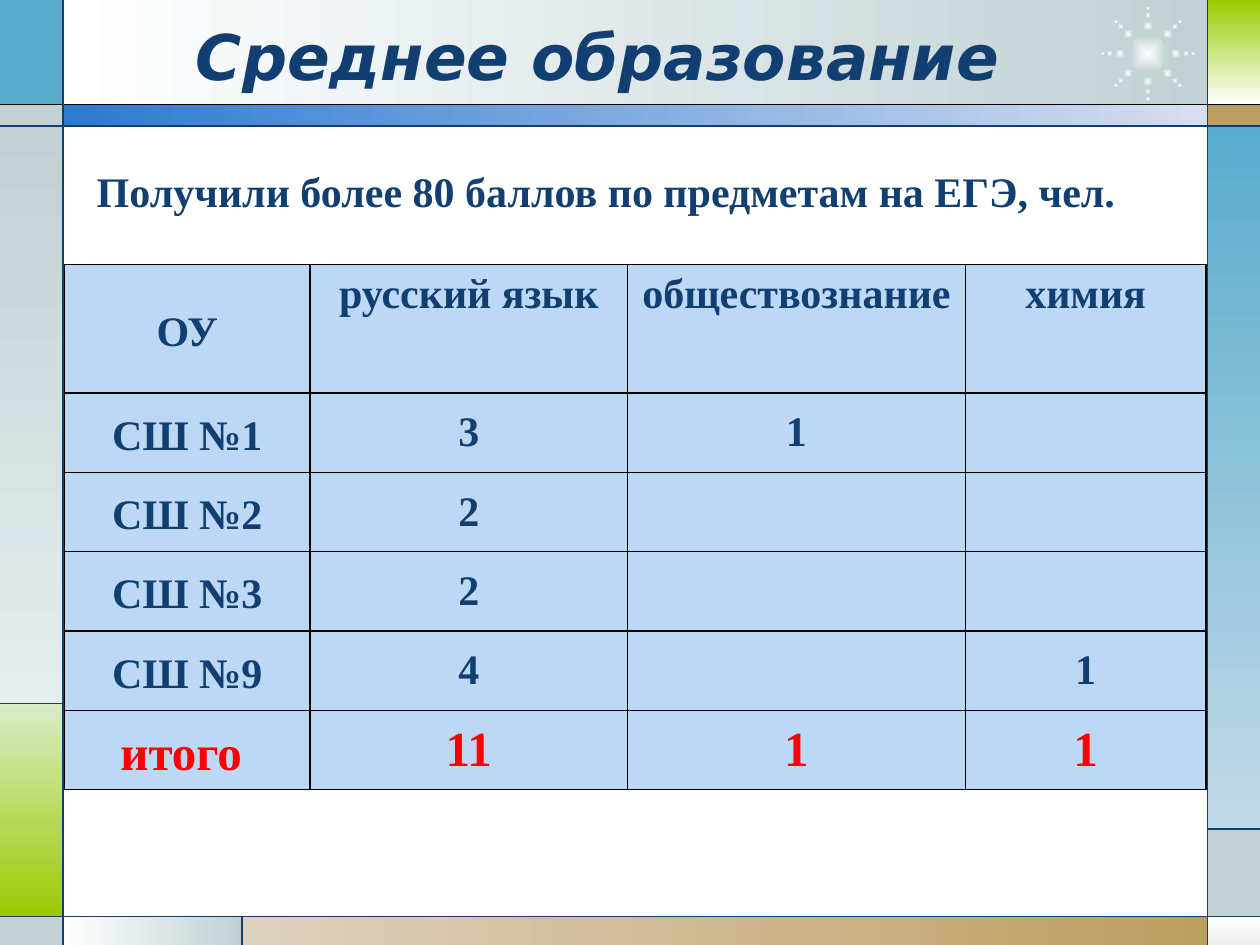
from math import cos, radians, sin

from lxml.etree import SubElement
from pptx import Presentation
from pptx.dml.color import RGBColor as RGB
from pptx.enum.shapes import MSO_CONNECTOR as CONNECTOR, MSO_SHAPE as SHAPE
from pptx.enum.text import MSO_ANCHOR as ANCHOR, PP_ALIGN as ALIGN
from pptx.oxml import parse_xml
from pptx.oxml.ns import nsdecls, qn
from pptx.util import Cm, Pt

C = {
    "navy": "113F71", "black": "000000", "white": "FFFFFF", "red": "FF0000",
    "sky": "5AABCC", "pale_sky": "C2D9E7", "grey": "C1D1D3", "mist": "E7EDEE",
    "lime": "99CC00", "pale_lime": "DBEBC9", "tan": "BD9E61", "sand": "DED1BF",
    "blue": "2D7ACF", "ice": "D7DEF0", "silver": "EDEDED", "cell": "BDD8F5",
}
RIGHT, DOWN = 0, 270


def write(tf, text, size=24, font="Times New Roman", color="navy", italic=False,
          align=ALIGN.CENTER, anchor=ANCHOR.MIDDLE, spacing=None, after=None):
    tf.word_wrap = True
    tf.vertical_anchor = anchor
    p = tf.paragraphs[0]
    p.alignment = align
    if spacing:
        p.line_spacing = spacing
    if after:
        p.space_after = Pt(after)
    r = p.add_run()
    r.text = text
    r.font.size, r.font.name = Pt(size), font
    r.font.bold, r.font.italic = True, italic
    r.font.color.rgb = RGB.from_string(C[color])


def add_filled(kind, x, y, w, h, colors, angle=RIGHT):
    """Add a borderless shape; two colours make a gradient."""
    sp = s.shapes.add_shape(kind, Cm(x), Cm(y), Cm(w), Cm(h))
    sp.shadow.inherit = False
    sp.line.fill.background()
    if len(colors) == 1:
        sp.fill.solid()
        sp.fill.fore_color.rgb = RGB.from_string(C[colors[0]])
    else:
        sp.fill.gradient()
        sp.fill.gradient_angle = angle
        for stop, color in zip(sp.fill.gradient_stops, colors):
            stop.color.rgb = RGB.from_string(C[color])
    return sp


prs = Presentation()
prs.slide_width, prs.slide_height = Cm(25.4), Cm(19.05)
s = prs.slides.add_slide(prs.slide_layouts[6])

# Frame: edges shared by the coloured panels and the ruling lines
W, H = 25.4, 19.05
left, tab, right = 1.27, 4.88, 24.34
head, band, lime_top, grey_top, foot = 2.11, 2.54, 14.18, 16.71, 18.47
panels = [
    (left, 0, right, head, ["white", "grey"], RIGHT),
    (0, 0, left, head, ["sky"], RIGHT),
    (0, head, left, band, ["grey"], RIGHT),
    (0, band, left, lime_top, ["grey", "mist"], DOWN),
    (0, lime_top, left, foot, ["pale_lime", "lime"], DOWN),
    (0, foot, left, H, ["grey"], RIGHT),
    (left, foot, tab, H, ["white", "grey"], RIGHT),
    (tab, foot, right, H, ["sand", "tan"], RIGHT),
    (right, foot, W, H, ["white", "silver"], DOWN),
    (right, grey_top, W, foot, ["grey"], RIGHT),
    (right, band, W, grey_top, ["sky", "pale_sky"], DOWN),
    (right, head, W, band, ["tan"], RIGHT),
    (right, 0, W, head, ["lime", "white"], DOWN),
    (left, head, right, band, ["blue", "ice"], RIGHT),
]
for x1, y1, x2, y2, colors, angle in panels:
    add_filled(SHAPE.RECTANGLE, x1, y1, x2 - x1, y2 - y1, colors, angle)

# Sunburst: a core and eight rays of three shrinking dots (x, y, diameter)
sun_x, sun_y = 23.14, 1.08
dots = [(sun_x, sun_y, 0.76)]
for turn in range(0, 360, 45):
    for radius, size in [(0.56, 0.19), (0.77, 0.12), (0.91, 0.09)]:
        dots.append((sun_x + radius * cos(radians(turn)),
                     sun_y + radius * sin(radians(turn)), size))
for x, y, size in dots:
    sp = add_filled(SHAPE.OVAL, x - size / 2, y - size / 2, size, size, ["white", "grey"])
    lin = sp.fill._fill._gradFill.find(qn("a:lin"))
    lin.getparent().replace(lin, parse_xml(
        f'<a:path {nsdecls("a")} path="shape">'
        '<a:fillToRect l="50000" t="50000" r="50000" b="50000"/></a:path>'))

rules = [
    (0, head, W, head, "black"), (0, band, W, band, "navy"),
    (0, foot, W, foot, "navy"), (left, 0, left, H, "navy"),
    (right, 0, right, H, "navy"), (0, lime_top, left, lime_top, "navy"),
    (tab, foot, tab, H, "navy"), (right, grey_top, W, grey_top, "navy"),
]
for x1, y1, x2, y2, color in rules:
    line = s.shapes.add_connector(CONNECTOR.STRAIGHT, Cm(x1), Cm(y1), Cm(x2), Cm(y2))
    line.line.color.rgb = RGB.from_string(C[color])
    line.line.width = Pt(0.75)
    SubElement(line._element.spPr, qn("a:effectLst"))

title = s.shapes.add_textbox(Cm(2.74), Cm(0.33), Cm(18.62), Cm(1.57))
write(title.text_frame, "Среднее образование", size=36, font="DejaVu Sans", italic=True)
subtitle = s.shapes.add_textbox(Cm(1.7), Cm(3.05), Cm(21.79), Cm(1.57))
write(subtitle.text_frame, "Получили более 80 баллов по предметам на ЕГЭ, чел.",
      align=ALIGN.LEFT)

# Results by school
rows = [
    ["ОУ", "русский язык", "обществознание", "химия"],
    ["СШ №1", "3", "1", ""],
    ["СШ №2", "2", "", ""],
    ["СШ №3", "2", "", ""],
    ["СШ №9", "4", "", "1"],
    ["итого ", "11", "1", "1"],
]
col_widths = [4.95, 6.4, 6.81, 4.85]
row_heights = [2.59] + [1.6] * 5
table = s.shapes.add_table(len(rows), len(col_widths), Cm(1.3), Cm(5.33),
                           Cm(sum(col_widths)), Cm(sum(row_heights))).table
table.first_row = table.horz_banding = False
for col, width in zip(table.columns, col_widths):
    col.width = Cm(width)
for row, height in zip(table.rows, row_heights):
    row.height = Cm(height)

for i, row in enumerate(rows):
    for j, text in enumerate(row):
        cell = table.cell(i, j)
        cell.margin_left = cell.margin_right = Cm(0.18)
        cell.margin_top = cell.margin_bottom = 0
        tcPr = cell._tc.get_or_add_tcPr()
        for side in ("lnL", "lnR", "lnT", "lnB"):
            tcPr.append(parse_xml(
                f'<a:{side} {nsdecls("a")} w="{Pt(1)}"><a:solidFill>'
                f'<a:srgbClr val="{C["black"]}"/></a:solidFill></a:{side}>'))
        cell.fill.solid()
        cell.fill.fore_color.rgb = RGB.from_string(C["cell"])
        if text:
            total = i == len(rows) - 1
            label = i == 0 or j == 0
            write(cell.text_frame, text, size=28 if total else 24,
                  color="red" if total else "navy",
                  spacing=1.15 if label else None, after=10 if label else None)
            cell.vertical_anchor = ANCHOR.TOP if i == 0 and j > 0 else ANCHOR.MIDDLE

prs.save("out.pptx")
